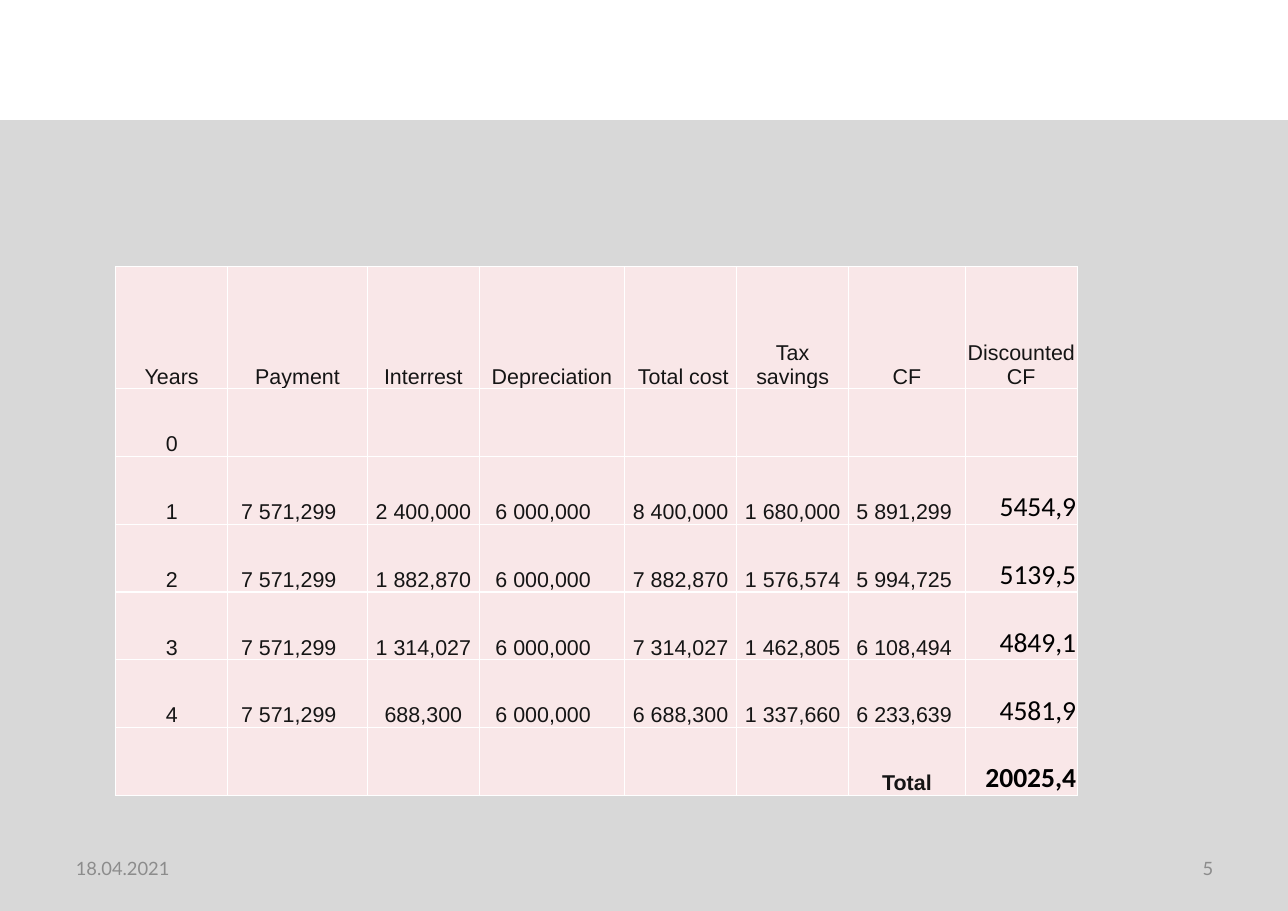
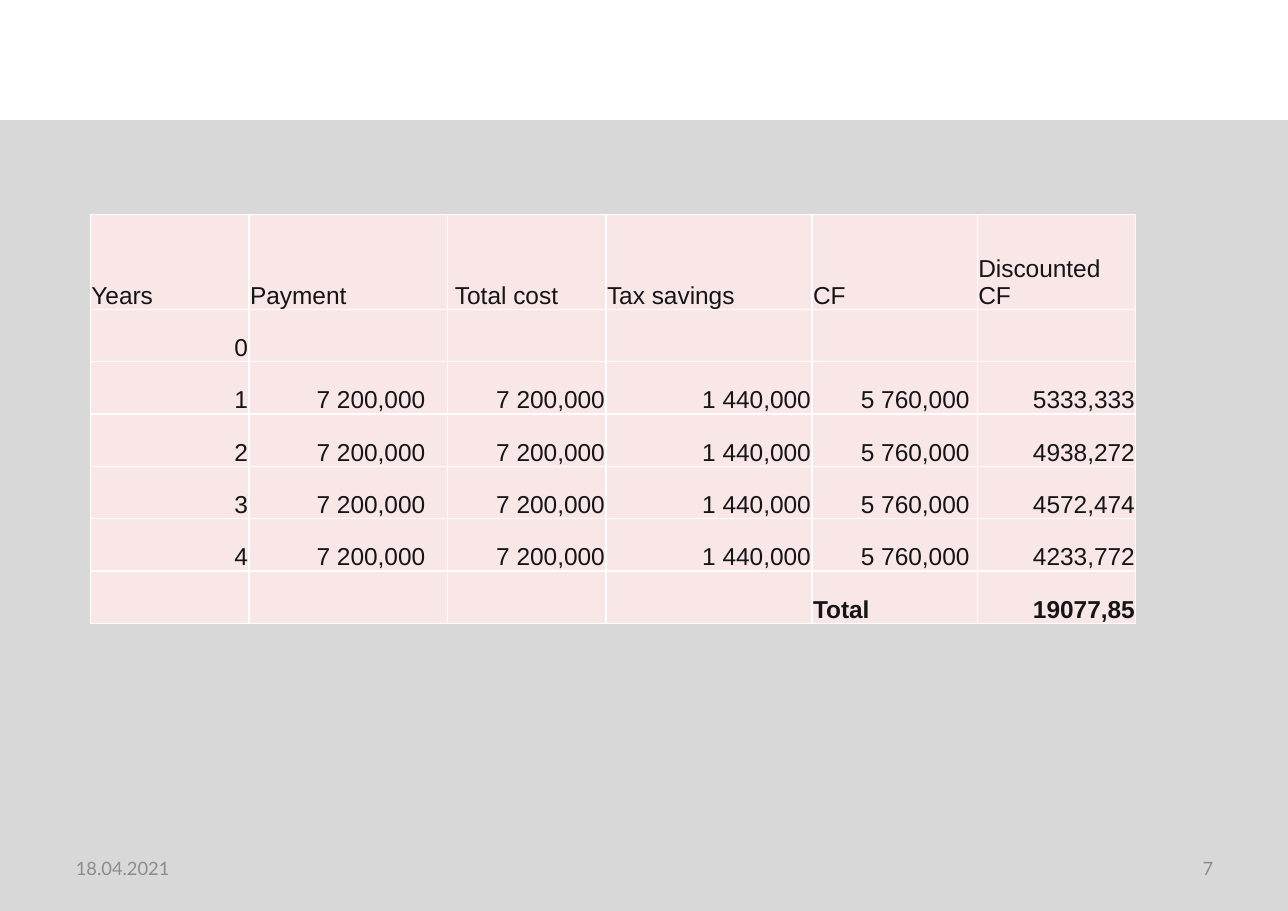
from lxml import etree
from pptx import Presentation
from pptx import util as u
from pptx.dml.color import RGBColor
from pptx.enum import shapes, text
from pptx.oxml.ns import qn

EMU_PER_PX = 9144  # 100 px to the inch
WIDTH, HEIGHT = 1169, 827
BAND_TOP = 109
WHITE, BAND, CELL = "FFFFFF", "D8D8D8", "F9E7E8"
INK, BLACK, MUTED = "151515", "000000", "8C8C8C"
LEFT, CENTER, RIGHT = text.PP_ALIGN.LEFT, text.PP_ALIGN.CENTER, text.PP_ALIGN.RIGHT
BOTTOM = text.MSO_ANCHOR.BOTTOM
MARGIN = 1

LEASE_ROWS = [
    ["Years", "Payment", "Interrest", "Depreciation", "Total cost",
     "Tax savings", "CF", "Discounted CF"],
    ["0"],
    ["1", "7 571,299", "2 400,000", "6 000,000", "8 400,000", "1 680,000", "5 891,299", "5454,9"],
    ["2", "7 571,299", "1 882,870", "6 000,000", "7 882,870", "1 576,574", "5 994,725", "5139,5"],
    ["3", "7 571,299", "1 314,027", "6 000,000", "7 314,027", "1 462,805", "6 108,494", "4849,1"],
    ["4", "7 571,299", "688,300", "6 000,000", "6 688,300", "1 337,660", "6 233,639", "4581,9"],
    [""] * 6 + ["Total", "20025,4"],
]
DISCOUNTED = ["5333,333", "4938,272", "4572,474", "4233,772"]
RENT_ROWS = [
    ["Years", "Payment", "Total cost", "Tax savings", "CF", "Discounted CF"],
    ["0"],
    *([str(year), "7 200,000", "7 200,000", "1 440,000", "5 760,000", value]
      for year, value in enumerate(DISCOUNTED, 1)),
    [""] * 4 + ["Total", "19077,85"],
]


def px(n):
    return u.Emu(round(n * EMU_PER_PX))


def rgb(value):
    return RGBColor.from_string(value)


def style(p, size, font, color, align, bold=False):
    p.alignment = align
    for r in p.runs:
        r.font.size = u.Pt(size)
        r.font.name = font
        r.font.bold = bold
        r.font.color.rgb = rgb(color)


def add_band(slide):
    sp = slide.shapes.add_shape(shapes.MSO_SHAPE.RECTANGLE, 0, px(BAND_TOP),
                                px(WIDTH), px(HEIGHT - BAND_TOP))
    sp.shadow.inherit = False
    sp.fill.solid()
    sp.fill.fore_color.rgb = rgb(BAND)
    sp.line.fill.background()


def add_footer(slide, page):
    for left, words, align in ((59, "18.04.2021", LEFT), (838, page, RIGHT)):
        sp = slide.shapes.add_textbox(px(left), px(766), px(273), px(44))
        tf = sp.text_frame
        tf.word_wrap = True
        tf.vertical_anchor = text.MSO_ANCHOR.MIDDLE
        tf.text = words
        style(tf.paragraphs[0], 12, "Lato", MUTED, align)


def add_slide(prs, page):
    slide = prs.slides.add_slide(prs.slide_layouts[6])
    add_band(slide)
    add_footer(slide, page)
    return slide


def set_borders(cell):
    tc_pr = cell._tc.get_or_add_tcPr()
    for i, side in enumerate(("lnL", "lnR", "lnT", "lnB")):
        ln = etree.Element(qn(f"a:{side}"), w=str(u.Pt(1)))
        fill = etree.SubElement(ln, qn("a:solidFill"))
        etree.SubElement(fill, qn("a:srgbClr"), val=WHITE)
        tc_pr.insert(i, ln)


def add_table(slide, box, rows, columns, head_height):
    """Add a pink grid; columns are shares of the box width, rows share what the head leaves."""
    left, top, width, height = box
    table = slide.shapes.add_table(len(rows), len(columns), *map(px, box)).table
    table.first_row = table.horz_banding = False
    for column, share in zip(table.columns, columns):
        column.width = px(width * share / sum(columns))
    body_height = (height - head_height) / (len(rows) - 1)
    for i, row in enumerate(table.rows):
        row.height = px(body_height if i else head_height)
    for cell in table.iter_cells():
        cell.fill.solid()
        cell.fill.fore_color.rgb = rgb(CELL)
        set_borders(cell)
    return table


def fill_table(table, rows, size, head_align, body_align, gaps, cost_indent, last_style):
    """Write the rows; gaps maps a column to the extra space right of its figures."""
    last_row, last_col = len(rows) - 1, len(rows[0]) - 1
    for i, row in enumerate(rows):
        for j, words in enumerate(row):
            if not words:
                continue
            cell = table.cell(i, j)
            is_label = i == 0 or words == "Total"
            indent = cost_indent if words == "Total cost" else 0
            gap = 0 if is_label else gaps.get(j, 0)
            cell.margin_left, cell.margin_right = px(MARGIN + indent), px(MARGIN + gap)
            cell.margin_top, cell.margin_bottom = px(MARGIN), 0
            cell.vertical_anchor = BOTTOM
            cell.text = words
            look = (size, "Arial", INK, head_align if is_label else body_align)
            if j == last_col and not is_label:
                look = last_style
            style(cell.text_frame.paragraphs[0], *look, bold=i == last_row)


def add_lease_slide(prs):
    slide = add_slide(prs, "5")
    table = add_table(slide, (105, 242, 873, 480), LEASE_ROWS,
                      [102, 127, 102, 132, 102, 102, 106, 102], 111)
    fill_table(table, LEASE_ROWS, 14, CENTER, CENTER, {1: 16, 3: 16, 6: 5}, 5,
               (18, "Calibri", BLACK, RIGHT))


def add_rent_slide(prs):
    slide = add_slide(prs, "7")
    table = add_table(slide, (82, 195, 949, 371), RENT_ROWS,
                      [144, 180, 144, 187, 150, 144], 86)
    fill_table(table, RENT_ROWS, 16, LEFT, RIGHT, {1: 19, 4: 6}, 6,
               (16, "Arial", INK, RIGHT))


def main():
    prs = Presentation()
    prs.slide_width, prs.slide_height = px(WIDTH), px(HEIGHT)
    add_lease_slide(prs)
    add_rent_slide(prs)
    prs.save("out.pptx")


if __name__ == "__main__":
    main()
